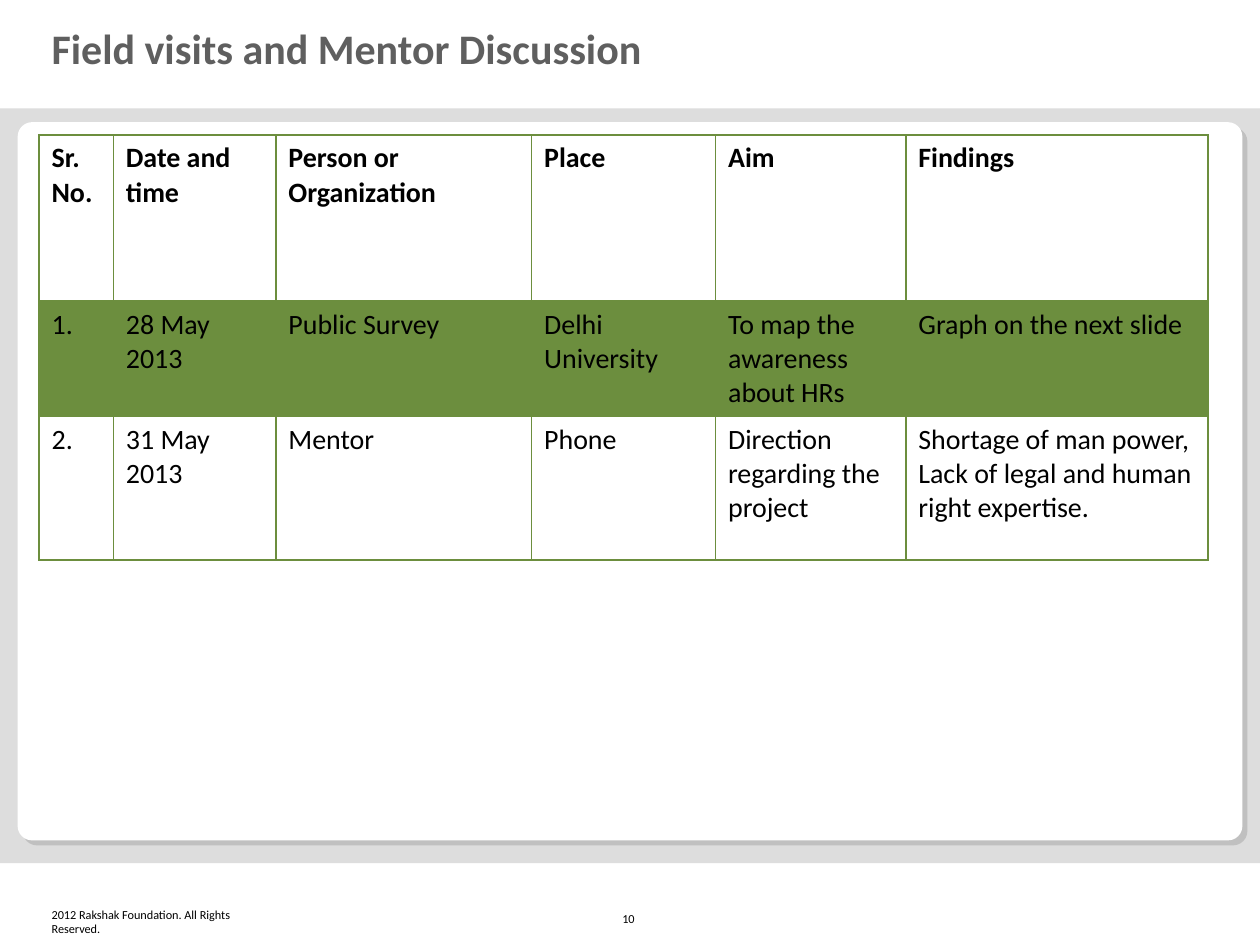
import dataclasses
import pptx
import pptx.util
import pptx.dml.color
import pptx.enum.shapes
import pptx.enum.text
import pptx.oxml
import pptx.oxml.ns
from lxml import etree

Inches = pptx.util.Inches
Shape = pptx.enum.shapes.MSO_SHAPE
Anchor = pptx.enum.text.MSO_ANCHOR
Align = pptx.enum.text.PP_ALIGN
qn = pptx.oxml.ns.qn


@dataclasses.dataclass(frozen=True)
class Theme:
    """Colours, font and type sizes of the slide."""
    font: str = "Calibri"
    ink: str = "000000"
    head: str = "5F5F5F"
    white: str = "FFFFFF"
    band: str = "DDDDDD"
    shade: str = "C0C0C0"
    green: str = "6C8E3E"
    title: int = 24
    body: int = 16
    small: int = 7


THEME = Theme()

ROWS = [
    ["Sr. No.", "Date and time", "Person or Organization", "Place", "Aim",
     "Findings"],
    ["1.", "28 May 2013", "Public Survey", "Delhi University",
     "To map the awareness about HRs", "Graph on the next slide"],
    ["2.", "31 May 2013", "Mentor", "Phone",
     "Direction regarding the project",
     "Shortage of man power, Lack of legal and human right expertise."],
]
WIDTHS = [0.59, 1.29, 2.03, 1.46, 1.51, 2.4]
HEIGHTS = [1.32, 0.91, 1.14]


def rgb(code):
    """Turn a hex code into a colour."""
    return pptx.dml.color.RGBColor.from_string(code)


def write(frame, text, size=THEME.body, color=THEME.ink, bold=False, line=1.0):
    """Put formatted, left-aligned text in a frame."""
    frame.word_wrap = True
    para = frame.paragraphs[0]
    para.text = text
    para.alignment = Align.LEFT
    para.line_spacing = line
    para.space_before = pptx.util.Pt(0)
    font = para.runs[0].font
    font.name, font.size, font.bold = THEME.font, pptx.util.Pt(size), bold
    font.color.rgb = rgb(color)


def block(slide, kind, box, color):
    """Draw a flat filled shape in the box."""
    shape = slide.shapes.add_shape(kind, *map(Inches, box))
    shape.shadow.inherit = False
    shape.fill.solid()
    shape.fill.fore_color.rgb = rgb(color)
    shape.line.fill.background()
    return shape


def panel(slide, box, drop=0.04):
    """Draw the grey band and the rounded card with its shade."""
    left, top, width, height = box
    block(slide, Shape.RECTANGLE, box, THEME.band)
    for step, color in ((drop, THEME.shade), (0, THEME.white)):
        place = (left + 0.14 + step, top + 0.11 + step,
                 width - 0.28, height - 0.29)
        card = block(slide, Shape.ROUNDED_RECTANGLE, place, color)
        card.adjustments[0] = 0.02


def title(slide, box, text):
    """Place and format the title."""
    shape = slide.shapes.title
    shape.left, shape.top, shape.width, shape.height = map(Inches, box)
    shape.text_frame.vertical_anchor = Anchor.MIDDLE
    write(shape.text_frame, text, size=THEME.title, color=THEME.head,
          bold=True, line=0.85)


def edge(cell, side, width):
    """Draw one border of a cell."""
    line = etree.SubElement(cell._tc.get_or_add_tcPr(), qn("a:ln" + side),
                            w=str(pptx.util.Pt(width)))
    fill = etree.SubElement(line, qn("a:solidFill"))
    etree.SubElement(fill, qn("a:srgbClr"), val=THEME.green)


def tint(cell, share):
    """Fill a cell with see-through green."""
    cell.fill.solid()
    cell.fill.fore_color.rgb = rgb(THEME.green)
    color = cell._tc.tcPr.find(".//" + qn("a:solidFill") + "[last()]/../"
                               + qn("a:solidFill") + "/" + qn("a:srgbClr"))
    etree.SubElement(color, qn("a:alpha"), val=str(share * 1000))


def visits(slide, box):
    """Build the table of visits."""
    frame = slide.shapes.add_table(len(ROWS), len(WIDTHS), *map(Inches, box))
    table = frame.table
    table.horz_banding = False
    for col, width in zip(table.columns, WIDTHS):
        col.width = Inches(width)
    for num, (row, height) in enumerate(zip(table.rows, HEIGHTS)):
        row.height = Inches(height)
        for cell, text in zip(row.cells, ROWS[num]):
            write(cell.text_frame, text, bold=num == 0)
            for side in "LRTB":
                thick = (num, side) in ((0, "B"), (1, "T"))
                edge(cell, side, 2 if thick else 1)
            if num == 1:
                tint(cell, 20)
            else:
                cell.fill.background()


def note(slide, box, text, inset):
    """Place a small line of text at the foot of the slide."""
    frame = slide.shapes.add_textbox(*map(Inches, box)).text_frame
    frame.margin_left = frame.margin_right = Inches(inset)
    frame.margin_top = frame.margin_bottom = Inches(inset / 2)
    frame.vertical_anchor = Anchor.BOTTOM
    write(frame, text, size=THEME.small)


def main():
    """Build and save the slide."""
    deck = pptx.Presentation()
    deck.slide_width, deck.slide_height = Inches(10), Inches(7.5)
    slide = deck.slides.add_slide(deck.slide_layouts[5])
    panel(slide, (0, 0.86, 10, 5.99))
    title(slide, (0.31, 0.19, 7.94, 0.44),
          "Field visits and Mentor Discussion")
    visits(slide, (0.31, 1.07, sum(WIDTHS), sum(HEIGHTS)))
    note(slide, (0.41, 7.19, 1.65, 0.24),
         "2012 Rakshak Foundation. All Rights Reserved.", 0)
    note(slide, (4.84, 7.06, 0.32, 0.34), "10", 0.1)
    deck.save("out.pptx")


if __name__ == "__main__":
    main()
